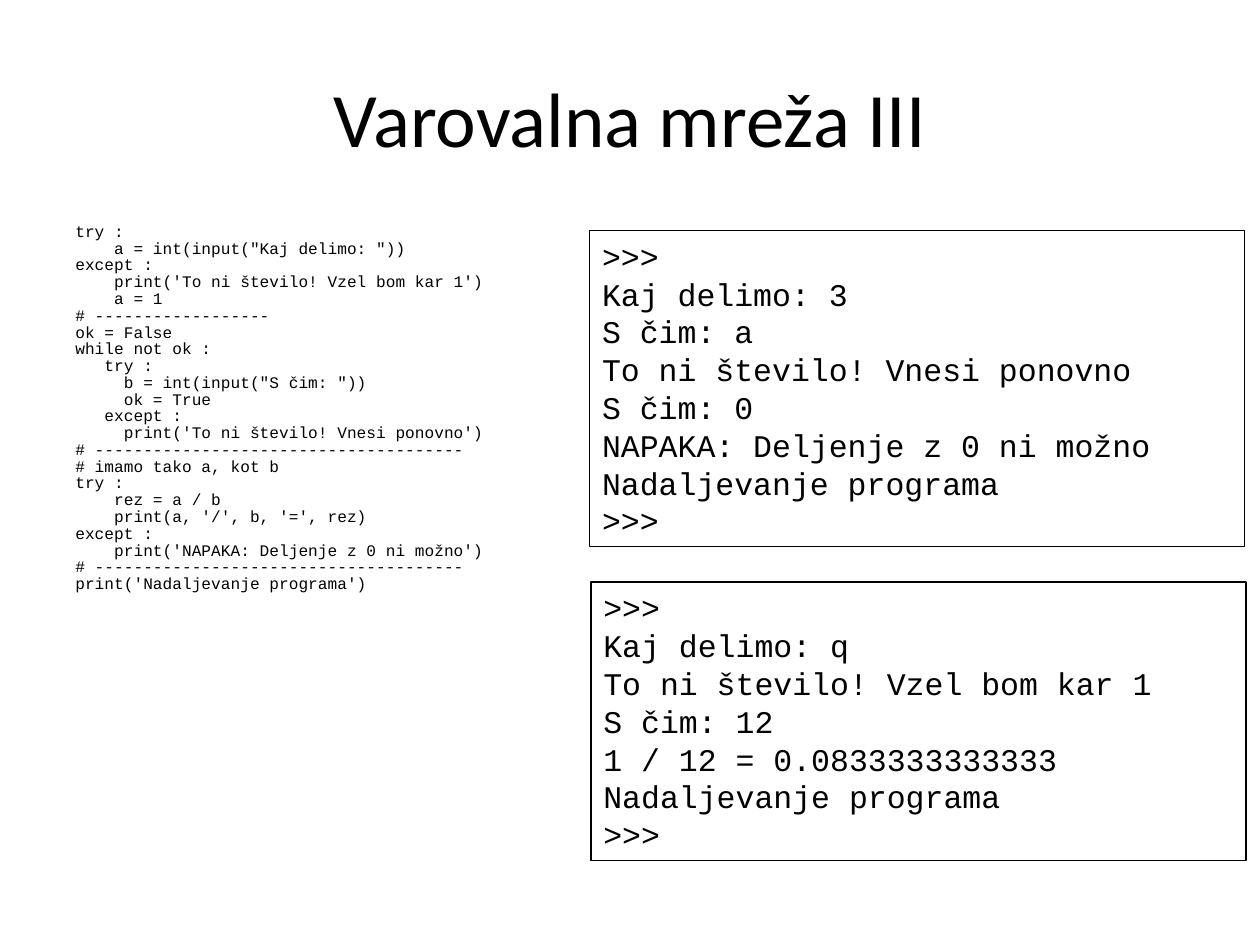
from pptx import Presentation
from pptx import util as u
from pptx.dml.color import RGBColor
from pptx.enum import shapes, text

BLACK = RGBColor(0, 0, 0)
WHITE = RGBColor(255, 255, 255)

CODE = """try :
    a = int(input("Kaj delimo: "))
except :
    print('To ni število! Vzel bom kar 1')
    a = 1
# ------------------
ok = False
while not ok :
   try :
     b = int(input("S čim: "))
     ok = True
   except :
     print('To ni število! Vnesi ponovno')
# --------------------------------------
# imamo tako a, kot b
try :
    rez = a / b
    print(a, '/', b, '=', rez)
except :
    print('NAPAKA: Deljenje z 0 ni možno')
# --------------------------------------
print('Nadaljevanje programa')"""

RUN_ZERO = """>>>
Kaj delimo: 3
S čim: a
To ni število! Vnesi ponovno
S čim: 0
NAPAKA: Deljenje z 0 ni možno
Nadaljevanje programa
>>>"""

RUN_LETTER = """>>>
Kaj delimo: q
To ni število! Vzel bom kar 1
S čim: 12
1 / 12 = 0.0833333333333
Nadaljevanje programa
>>>"""


class Deck:
    """Holds the style and the current slide."""

    TITLE = {"name": "Calibri", "size": u.Pt(44)}
    LISTING = {"name": "Courier New", "size": u.Pt(9.2)}
    CONSOLE = {"name": "Courier New", "size": u.Pt(18)}

    def __init__(self, prs):
        self.s = prs.slides.add_slide(prs.slide_layouts[6])

    def fill_text(self, sp, content, font, frame=None, para=None):
        tf = sp.text_frame
        for key, value in {"word_wrap": True, **(frame or {})}.items():
            setattr(tf, key, value)
        for i, line in enumerate(content.split("\n")):
            p = tf.add_paragraph() if i else tf.paragraphs[0]
            for key, value in {"alignment": text.PP_ALIGN.LEFT, **(para or {})}.items():
                setattr(p, key, value)
            r = p.add_run()
            r.text = line
            for key, value in font.items():
                setattr(r.font, key, value)
            r.font.color.rgb = BLACK

    def textbox(self, at):
        return self.s.shapes.add_textbox(*map(u.Inches, at))

    def title(self, content, at):
        self.fill_text(self.textbox(at), content, self.TITLE,
                       {"vertical_anchor": text.MSO_ANCHOR.MIDDLE},
                       {"alignment": text.PP_ALIGN.CENTER})

    def listing(self, content, at):
        self.fill_text(self.textbox(at), content, self.LISTING,
                       para={"line_spacing": 0.7, "space_before": u.Pt(1.84)})

    def console(self, content, at):
        sp = self.s.shapes.add_shape(shapes.MSO_SHAPE.RECTANGLE, *map(u.Inches, at))
        sp.shadow.inherit = False
        sp.fill.solid()
        sp.fill.fore_color.rgb = WHITE
        sp.line.color.rgb = BLACK
        sp.line.width = u.Pt(0.75)
        self.fill_text(sp, content, self.CONSOLE,
                       {"vertical_anchor": text.MSO_ANCHOR.TOP,
                        "auto_size": text.MSO_AUTO_SIZE.SHAPE_TO_FIT_TEXT})


def main():
    prs = Presentation()
    prs.slide_width, prs.slide_height = u.Inches(10), u.Inches(7.5)
    deck = Deck(prs)

    # Title and program
    deck.title("Varovalna mreža III", (0.5, 0.3, 9, 1.25))
    deck.listing(CODE, (0.5, 1.75, 9, 3.26))

    # Two sample runs
    deck.console(RUN_LETTER, (4.69, 4.62, 5.2, 2.21))
    deck.console(RUN_ZERO, (4.68, 1.83, 5.2, 2.51))

    prs.save("out.pptx")


if __name__ == "__main__":
    main()
